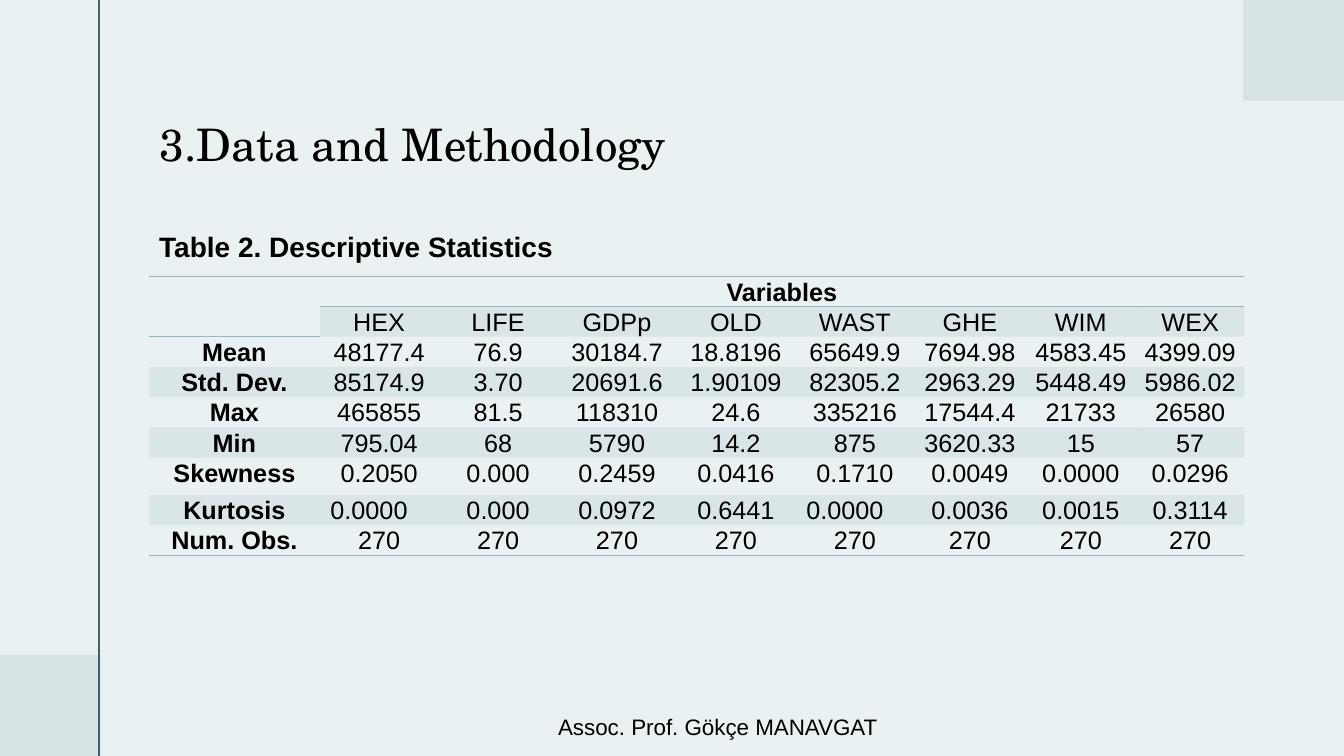
"""Build the descriptive statistics slide with its table."""
import dataclasses

import pptx
import pptx.dml.color
import pptx.enum.shapes
import pptx.enum.text
import pptx.oxml
import pptx.oxml.ns
import pptx.util
from pptx.util import Inches


@dataclasses.dataclass(frozen=True)
class Theme:
    """Colours, fonts and type sizes of the slide."""

    background: str = "EAF1F2"
    corner: str = "D5E3E5"
    rule: str = "40636A"
    accent: str = "95B8BF"
    text: str = "000000"
    title_font: str = "TeX Gyre Schola"
    body_font: str = "Arial"
    title_size: int = 32
    caption_size: int = 20
    table_size: int = 18
    footer_size: int = 16
    rule_width: float = 1.5
    border_width: int = 1
    band_opacity: int = 20


THEME = Theme()
ALIGN = pptx.enum.text.PP_ALIGN
ANCHOR = pptx.enum.text.MSO_ANCHOR
NO_GRID_STYLE = "{2D5ABB26-0587-4C30-8999-92F81FD0307C}"
COLUMN_WIDTHS = [1.69, 1.18, 1.18, 1.18, 1.18, 1.18, 1.1, 1.1, 1.07]
ROW_HEIGHT = 0.3
SKEWNESS_HEIGHT = 0.37
CELL_MARGIN = 0.07
SHIFTED_MARGIN = 0.27
SHIFTED_CELLS = {("Kurtosis", 1), ("Kurtosis", 5)}
STATISTICS = [
    ["", "Variables", "", "", "", "", "", "", ""],
    ["", "HEX", "LIFE", "GDPp", "OLD", "WAST", "GHE", "WIM", "WEX"],
    ["Mean", "48177.4", "76.9", "30184.7", "18.8196", "65649.9", "7694.98", "4583.45", "4399.09"],
    ["Std. Dev.", "85174.9", "3.70", "20691.6", "1.90109", "82305.2", "2963.29", "5448.49", "5986.02"],
    ["Max", "465855", "81.5", "118310", "24.6", "335216", "17544.4", "21733", "26580"],
    ["Min", "795.04", "68", "5790", "14.2", "875", "3620.33", "15", "57"],
    ["Skewness", "0.2050", "0.000", "0.2459", "0.0416", "0.1710", "0.0049", "0.0000", "0.0296"],
    ["Kurtosis", "0.0000", "0.000", "0.0972", "0.6441", "0.0000", "0.0036", "0.0015", "0.3114"],
    ["Num. Obs."] + ["270"] * 8,
]


def color(value):
    """Return the colour for a hexadecimal value."""
    return pptx.dml.color.RGBColor.from_string(value)


def format_paragraph(paragraph, font_name, size, bold=False, alignment=ALIGN.LEFT):
    """Set the font and alignment of a paragraph."""
    paragraph.alignment = alignment
    paragraph.font.name = font_name
    paragraph.font.size = pptx.util.Pt(size)
    paragraph.font.bold = bold
    paragraph.font.color.rgb = color(THEME.text)


def add_corner(slide, left, top):
    """Add a one-inch decorative corner square."""
    shape = slide.shapes.add_shape(
        pptx.enum.shapes.MSO_SHAPE.RECTANGLE, Inches(left), Inches(top), Inches(1), Inches(1)
    )
    shape.shadow.inherit = False
    shape.fill.solid()
    shape.fill.fore_color.rgb = color(THEME.corner)
    shape.line.fill.background()


def add_side_rule(slide):
    """Add the vertical rule along the left margin."""
    connector = slide.shapes.add_connector(
        pptx.enum.shapes.MSO_CONNECTOR.STRAIGHT, Inches(0.98), Inches(0), Inches(0.98), Inches(7.5)
    )
    connector.line.color.rgb = color(THEME.rule)
    connector.line.width = pptx.util.Pt(THEME.rule_width)
    properties = connector.element.find(pptx.oxml.ns.qn("p:spPr"))
    properties.append(pptx.oxml.parse_xml(f"<a:effectLst {pptx.oxml.ns.nsdecls('a')}/>"))


def set_title(slide, text):
    """Place and format the title placeholder."""
    title = slide.shapes.title
    title.left, title.top = Inches(1.48), Inches(0.68)
    title.width, title.height = Inches(10.85), Inches(1.57)
    frame = title.text_frame
    frame.text = text
    frame.vertical_anchor = ANCHOR.BOTTOM
    frame.margin_bottom = Inches(0.55)
    format_paragraph(frame.paragraphs[0], THEME.title_font, THEME.title_size)
    frame.paragraphs[0].line_spacing = 0.9


def add_text(slide, text, left, top, width, height, size, bold=False, alignment=ALIGN.LEFT):
    """Add a wrapped text box whose text sits at the bottom."""
    box = slide.shapes.add_textbox(Inches(left), Inches(top), Inches(width), Inches(height))
    frame = box.text_frame
    frame.word_wrap = True
    frame.vertical_anchor = ANCHOR.BOTTOM
    frame.text = text
    format_paragraph(frame.paragraphs[0], THEME.body_font, size, bold, alignment)


def add_border(cell, side):
    """Draw a border on the top (T) or bottom (B) of a cell."""
    properties = cell._tc.get_or_add_tcPr()
    width = pptx.util.Pt(THEME.border_width)
    properties.append(pptx.oxml.parse_xml(
        f'<a:ln{side} {pptx.oxml.ns.nsdecls("a")} w="{width}"><a:solidFill>'
        f'<a:srgbClr val="{THEME.accent}"/></a:solidFill></a:ln{side}>'
    ))


def fill_band(cell):
    """Give a cell the translucent band colour."""
    cell.fill.solid()
    cell.fill.fore_color.rgb = color(THEME.accent)
    for value in cell._tc.tcPr.iter(pptx.oxml.ns.qn("a:srgbClr")):
        if value.getparent().getparent() is cell._tc.tcPr:
            value.append(pptx.oxml.parse_xml(
                f'<a:alpha {pptx.oxml.ns.nsdecls("a")} val="{THEME.band_opacity * 1000}"/>'
            ))


def format_cell(cell, text, bold, margin_right):
    """Write centred text into a table cell."""
    cell.margin_left, cell.margin_right = Inches(CELL_MARGIN), Inches(margin_right)
    cell.margin_top = cell.margin_bottom = Inches(0)
    cell.text = text
    paragraph = cell.text_frame.paragraphs[0]
    format_paragraph(paragraph, THEME.body_font, THEME.table_size, bold, ALIGN.CENTER)
    paragraph.line_spacing = 1.07
    paragraph.space_after = pptx.util.Pt(8)


def add_statistics_table(slide):
    """Add the statistics table with merged headers and banded rows."""
    row_count, column_count = len(STATISTICS), len(COLUMN_WIDTHS)
    frame = slide.shapes.add_table(
        row_count, column_count, Inches(1.48), Inches(2.74), Inches(10.85), Inches(2.77)
    )
    for style in frame.element.iter(pptx.oxml.ns.qn("a:tableStyleId")):
        style.text = NO_GRID_STYLE
    table = frame.table
    table.first_row = table.horz_banding = False
    for column, width in zip(table.columns, COLUMN_WIDTHS):
        column.width = Inches(width)
    for row_index, values in enumerate(STATISTICS):
        label = values[0]
        height = SKEWNESS_HEIGHT if label == "Skewness" else ROW_HEIGHT
        table.rows[row_index].height = Inches(height)
        for column_index, text in enumerate(values):
            cell = table.cell(row_index, column_index)
            shifted = (label, column_index) in SHIFTED_CELLS
            bold = row_index == 0 or column_index == 0
            format_cell(cell, text, bold, SHIFTED_MARGIN if shifted else CELL_MARGIN)
            if row_index == 0:
                add_border(cell, "T")
            header_end = 1 if column_index == 0 else 0
            if row_index in (header_end, row_count - 1):
                add_border(cell, "B")
            if row_index % 2 and (row_index, column_index) != (1, 0):
                fill_band(cell)
            else:
                cell.fill.background()
    add_border_before_fill(table.cell(0, 0), "B")
    table.cell(0, 0).merge(table.cell(1, 0))
    table.cell(0, 1).merge(table.cell(0, column_count - 1))


def add_border_before_fill(cell, side):
    """Add a border to a filled cell, keeping the fill last."""
    fill = cell._tc.tcPr[-1]
    add_border(cell, side)
    cell._tc.tcPr.append(fill)


def main():
    """Build and save the slide."""
    presentation = pptx.Presentation()
    presentation.slide_width, presentation.slide_height = Inches(13.33), Inches(7.5)
    slide = presentation.slides.add_slide(presentation.slide_layouts[5])
    slide.background.fill.solid()
    slide.background.fill.fore_color.rgb = color(THEME.background)
    add_corner(slide, 0, 6.5)
    add_corner(slide, 12.33, 0)
    add_side_rule(slide)
    set_title(slide, "3.Data and Methodology")
    add_statistics_table(slide)
    add_text(slide, "Table 2. Descriptive Statistics", 1.48, 1.62, 7.78, 1.04, THEME.caption_size, bold=True)
    add_text(slide, "Assoc. Prof. Gökçe MANAVGAT", 3.99, 7.02, 6.26, 0.37, THEME.footer_size, alignment=ALIGN.CENTER)
    presentation.save("out.pptx")


if __name__ == "__main__":
    main()
